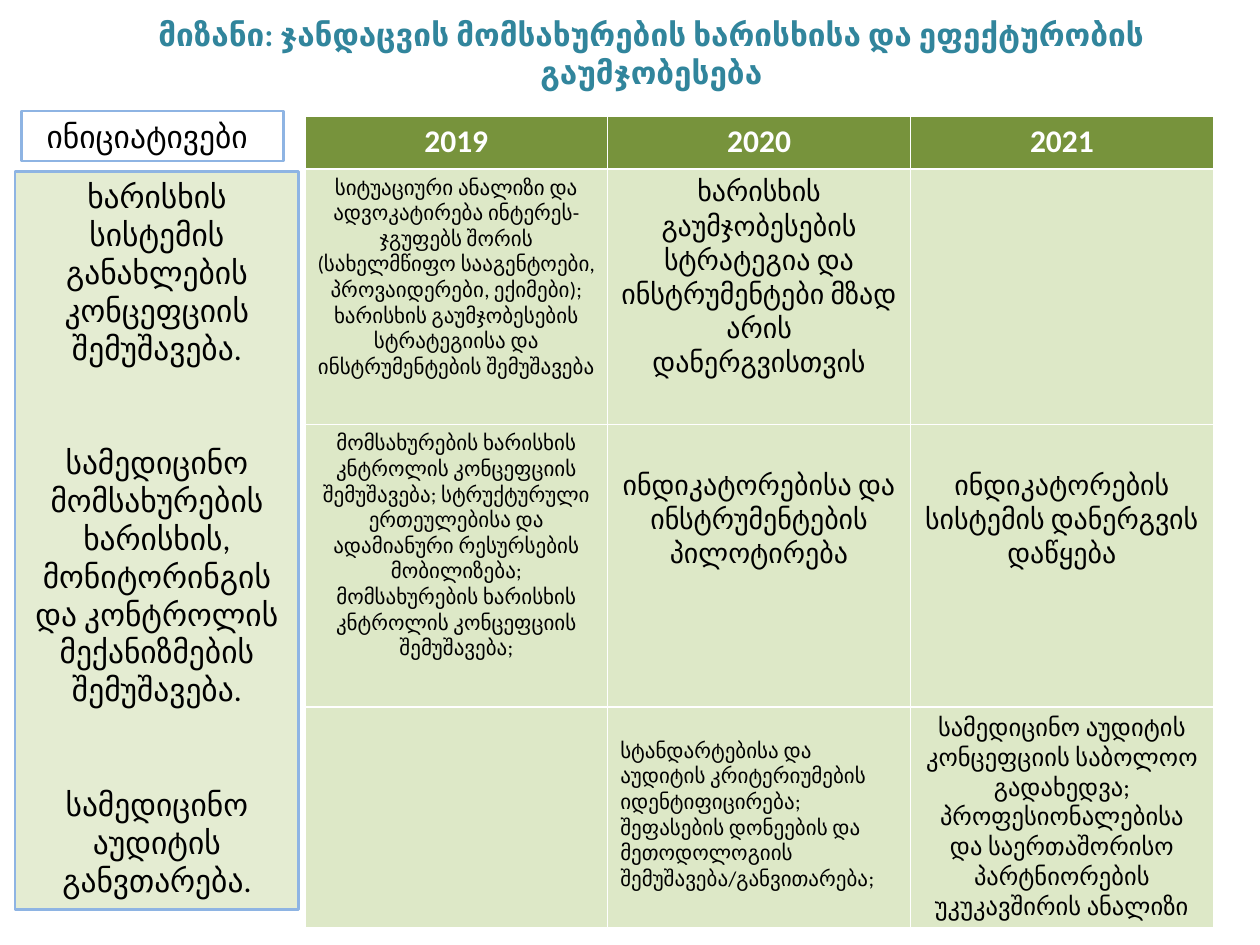
from dataclasses import dataclass

import lxml.etree
import pptx
import pptx.dml.color
import pptx.enum.shapes
import pptx.enum.text
import pptx.oxml.ns
import pptx.util
from pptx.util import Inches

ALIGN = pptx.enum.text.PP_ALIGN
ANCHOR = pptx.enum.text.MSO_ANCHOR
FONT = "Calibri"
COLORS = {
    "title": "31859C",
    "header": "77933C",
    "pale": "D7E4BD",
    "outline": "8EB4E3",
    "white": "FFFFFF",
    "black": "000000",
}


@dataclass
class Entry:
    text: str = ""
    size: int = 12
    align: ALIGN = ALIGN.CENTER
    top: float = 0.05
    color: str = "black"
    bold: bool = False
    fill: str = "pale"
    opacity: int = 84


@dataclass
class Box:
    left: float
    top: float
    width: float
    height: float
    paragraphs: list[str]
    align: ALIGN
    margin_left: float = 0.1
    gap: int = 0
    fill: str | None = None
    opacity: int = 100


YEARS = ["2019", "2020", "2021"]
ROW_HEIGHTS = [0.42, 2.03, 2.24, 1.74]
ROWS = [
    [Entry(year, 18, color="white", bold=True, fill="header", opacity=100)
     for year in YEARS],
    [
        Entry("სიტუაციური ანალიზი და ადვოკატირება ინტერეს-ჯგუფებს შორის "
              "(სახელმწიფო სააგენტოები, პროვაიდერები, ექიმები); ხარისხის "
              "გაუმჯობესების სტრატეგიისა და ინსტრუმენტების შემუშავება"),
        Entry("ხარისხის გაუმჯობესების სტრატეგია და ინსტრუმენტები მზად არის "
              "დანერგვისთვის", 16),
        Entry(),
    ],
    [
        Entry("მომსახურების ხარისხის კნტროლის კონცეფციის შემუშავება; "
              "სტრუქტურული ერთეულებისა და ადამიანური რესურსების მობილიზება; "
              "მომსახურების ხარისხის კნტროლის კონცეფციის შემუშავება;"),
        Entry("ინდიკატორებისა და ინსტრუმენტების პილოტირება", 16, top=0.35),
        Entry("ინდიკატორების სისტემის დანერგვის დაწყება", 16, top=0.35),
    ],
    [
        Entry(),
        Entry("სტანდარტებისა და აუდიტის კრიტერიუმების იდენტიფიცირება; "
              "შეფასების დონეების და მეთოდოლოგიის შემუშავება/განვითარება;",
              align=ALIGN.LEFT, top=0.25),
        Entry("სამედიცინო აუდიტის კონცეფციის საბოლოო გადახედვა; "
              "პროფესიონალებისა და საერთაშორისო პარტნიორების უკუკავშირის "
              "ანალიზი", 14),
    ],
]
BOXES = [
    Box(0.12, 1.36, 2.25, 5.86, [
        "ხარისხის სისტემის განახლების კონცეფციის შემუშავება.",
        "სამედიცინო მომსახურების ხარისხის, მონიტორინგის და კონტროლის "
        "მექანიზმების შემუშავება.",
        "სამედიცინო აუდიტის განვთარება.",
    ], ALIGN.CENTER, gap=44, fill="pale", opacity=67),
    Box(0.17, 0.88, 2.08, 0.4, ["ინიციატივები"], ALIGN.LEFT, margin_left=0.2),
]


def rgb(name: str) -> pptx.dml.color.RGBColor:
    return pptx.dml.color.RGBColor.from_string(COLORS[name])


def set_fill(fill, element, color: str, opacity: int) -> None:
    """Fill solidly; element is the XML that holds the fill."""
    fill.solid()
    fill.fore_color.rgb = rgb(color)
    if opacity < 100:
        qn = pptx.oxml.ns.qn
        srgb = element.find(f"{qn('a:solidFill')}/{qn('a:srgbClr')}")
        alpha = lxml.etree.SubElement(srgb, qn("a:alpha"))
        alpha.set("val", str(opacity * 1000))


def write(p, text: str, size: int, color: str, align: ALIGN,
          bold: bool = False) -> None:
    p.text = text
    p.alignment = align
    p.font.name = FONT
    p.font.size = pptx.util.Pt(size)
    p.font.bold = bold
    p.font.color.rgb = rgb(color)


def add_title(s) -> None:
    sp = s.shapes.title
    sp.left, sp.top = Inches(0.67), Inches(0.17)
    sp.width, sp.height = Inches(9), Inches(0.5)
    tf = sp.text_frame
    tf.vertical_anchor = ANCHOR.MIDDLE
    write(tf.paragraphs[0],
          "მიზანი: ჯანდაცვის მომსახურების ხარისხისა და ეფექტურობის "
          "გაუმჯობესება", 18, "title", ALIGN.CENTER, bold=True)


def add_plan(s) -> None:
    table = s.shapes.add_table(
        len(ROWS), len(YEARS), Inches(2.42), Inches(0.92),
        Inches(7.21), Inches(sum(ROW_HEIGHTS))).table
    for row, height, entries in zip(table.rows, ROW_HEIGHTS, ROWS):
        row.height = Inches(height)
        for cell, entry in zip(row.cells, entries):
            cell.margin_top = Inches(entry.top)
            set_fill(cell.fill, cell._tc.tcPr, entry.fill, entry.opacity)
            if entry.text:
                write(cell.text_frame.paragraphs[0], entry.text, entry.size,
                      entry.color, entry.align, entry.bold)


def add_box(s, box: Box) -> None:
    sp = s.shapes.add_shape(
        pptx.enum.shapes.MSO_SHAPE.RECTANGLE, Inches(box.left),
        Inches(box.top), Inches(box.width), Inches(box.height))
    sp.shadow.inherit = False
    if box.fill:
        set_fill(sp.fill, sp._element.spPr, box.fill, box.opacity)
    else:
        sp.fill.background()
    sp.line.color.rgb = rgb("outline")
    sp.line.width = pptx.util.Pt(1.5)
    tf = sp.text_frame
    tf.word_wrap = True
    tf.vertical_anchor = ANCHOR.TOP
    tf.margin_left = Inches(box.margin_left)
    for i, text in enumerate(box.paragraphs):
        p = tf.add_paragraph() if i else tf.paragraphs[0]
        write(p, text, 18, "black", box.align)
        if i:
            p.space_before = pptx.util.Pt(box.gap)


def main() -> None:
    prs = pptx.Presentation()
    prs.slide_width, prs.slide_height = Inches(10), Inches(7.5)
    s = prs.slides.add_slide(prs.slide_layouts.get_by_name("Title Only"))
    add_title(s)
    add_plan(s)
    for box in BOXES:
        add_box(s, box)
    prs.save("out.pptx")


if __name__ == "__main__":
    main()
